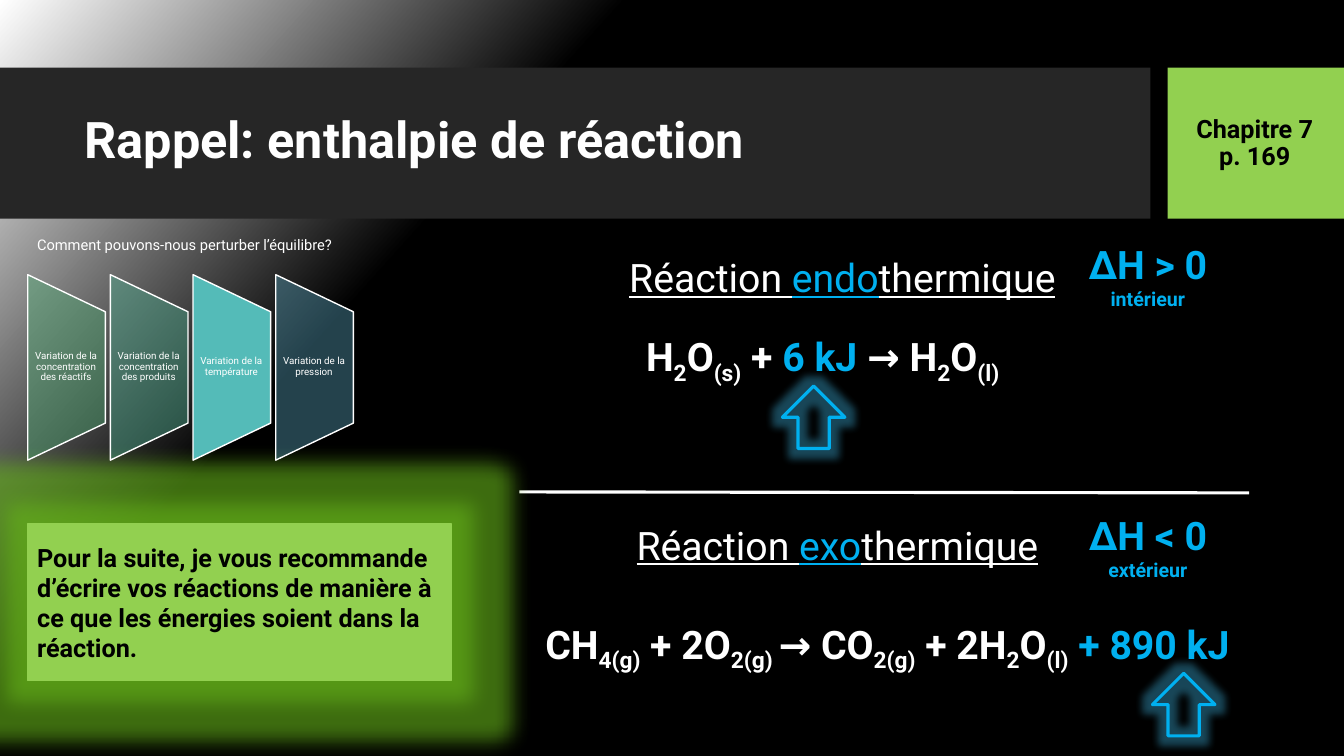
from dataclasses import dataclass

import lxml.etree
import pptx
import pptx.dml.color
import pptx.enum.shapes
import pptx.enum.text
import pptx.oxml.ns
import pptx.util

Inches = pptx.util.Inches
Shapes = pptx.enum.shapes.MSO_SHAPE
Align = pptx.enum.text.PP_ALIGN
Anchor = pptx.enum.text.MSO_ANCHOR
qn = pptx.oxml.ns.qn


@dataclass(frozen=True)
class Theme:
    font: str = "Roboto"
    white: str = "FFFFFF"
    black: str = "000000"
    band: str = "262626"
    green: str = "92D050"
    green_glow: str = "66B41A"
    blue: str = "00B0F0"
    blue_glow: str = "3FB4E0"
    title: float = 36
    formula: float = 28
    body: float = 18
    note: float = 14
    question: float = 10.5
    factor: float = 7


THEME = Theme()


@dataclass(frozen=True)
class Box:
    left: float
    top: float
    width: float
    height: float

    def lengths(self) -> list:
        return [Inches(n) for n in (self.left, self.top, self.width, self.height)]


@dataclass(frozen=True)
class Fragment:
    text: str
    color: str = THEME.white
    subscript: bool = False


@dataclass(frozen=True)
class Line:
    fragments: list[Fragment]
    size: float
    bold: bool = False
    underline: bool = False
    align: Align = Align.CENTER
    spacing: float = 0.9


@dataclass(frozen=True)
class Reaction:
    heading: Box
    prefix: str
    equation_box: Box
    equation: list[Fragment]
    arrow: Box
    enthalpy_box: Box
    enthalpy: str
    side: str


@dataclass(frozen=True)
class Factor:
    text: str
    color: str
    opacity: int = 100


def rgb(color: str) -> pptx.dml.color.RGBColor:
    return pptx.dml.color.RGBColor.from_string(color)


def sub(text: str) -> Fragment:
    return Fragment(text, subscript=True)


def write(shape, lines: list[Line], anchor=Anchor.MIDDLE) -> None:
    frame = shape.text_frame
    frame.word_wrap = True
    frame.vertical_anchor = anchor
    for index, line in enumerate(lines):
        paragraph = frame.add_paragraph() if index else frame.paragraphs[0]
        paragraph.alignment = line.align
        paragraph.line_spacing = line.spacing
        paragraph.font.name = THEME.font
        paragraph.font.size = pptx.util.Pt(line.size)
        paragraph.font.bold = line.bold
        paragraph.font.underline = line.underline
        for fragment in line.fragments:
            run = paragraph.add_run()
            run.text = fragment.text
            run.font.color.rgb = rgb(fragment.color)
            if fragment.subscript:
                run._r.get_or_add_rPr().set("baseline", "-25000")


def add_text(slide, box: Box, lines: list[Line], anchor=Anchor.MIDDLE):
    shape = slide.shapes.add_textbox(*box.lengths())
    write(shape, lines, anchor)
    return shape


def add_alpha(parent, opacity: int) -> None:
    lxml.etree.SubElement(parent, qn("a:alpha"), val=str(opacity * 1000))


def add_shape(slide, kind, box: Box, fill: str = "", line: str = "",
              weight: float = 1, opacity: int = 100):
    shape = slide.shapes.add_shape(kind, *box.lengths())
    shape.shadow.inherit = False
    if fill:
        shape.fill.solid()
        shape.fill.fore_color.rgb = rgb(fill)
        if opacity < 100:
            add_alpha(shape._element.spPr.find(qn("a:solidFill"))[0], opacity)
    else:
        shape.fill.background()
    if line:
        shape.line.color.rgb = rgb(line)
        shape.line.width = pptx.util.Pt(weight)
    else:
        shape.line.fill.background()
    return shape


def add_glow(shape, color: str, radius: float, opacity: int) -> None:
    effects = shape._element.spPr.find(qn("a:effectLst"))
    glow = lxml.etree.SubElement(effects, qn("a:glow"), rad=str(Inches(radius)))
    add_alpha(lxml.etree.SubElement(glow, qn("a:srgbClr"), val=color), opacity)


def paint_background(slide) -> None:
    fill = slide.background.fill
    fill.gradient()
    fill.gradient_angle = 318
    for stop, position, color in zip(fill.gradient_stops, (0, 0.31), (THEME.white, THEME.black)):
        stop.position = position
        stop.color.rgb = rgb(color)


def add_header(slide) -> None:
    add_shape(slide, Shapes.RECTANGLE, Box(0, 0.67, 11.41, 1.5), THEME.band)
    add_shape(slide, Shapes.RECTANGLE, Box(11.58, 0.67, 1.75, 1.5), THEME.green)
    title = Fragment("Rappel: enthalpie de réaction")
    add_text(slide, Box(0.74, 0.82, 10.51, 1.18),
             [Line([title], THEME.title, bold=True, align=Align.LEFT)])
    add_text(slide, Box(11.56, 0.67, 1.77, 1.51),
             [Line([Fragment(text, THEME.black)], THEME.body, bold=True)
              for text in ("Chapitre 7", "p. 169")])


def add_reaction(slide, reaction: Reaction) -> None:
    heading = [Fragment("Réaction "), Fragment(reaction.prefix, THEME.blue), Fragment("thermique")]
    add_text(slide, reaction.heading, [Line(heading, THEME.formula, underline=True)])
    add_text(slide, reaction.equation_box, [Line(reaction.equation, THEME.formula, bold=True)])
    arrow = add_shape(slide, Shapes.UP_ARROW, reaction.arrow, line=THEME.blue, weight=2.25)
    add_glow(arrow, THEME.blue_glow, 0.16, 40)
    add_text(slide, reaction.enthalpy_box,
             [Line([Fragment(text, THEME.blue)], size, bold=True, spacing=1.0)
              for text, size in ((reaction.enthalpy, THEME.formula), (reaction.side, THEME.note))],
             Anchor.TOP)


def add_divider(slide) -> None:
    divider = slide.shapes.add_connector(
        pptx.enum.shapes.MSO_CONNECTOR.STRAIGHT,
        Inches(12.39), Inches(4.89), Inches(5.15), Inches(4.88))
    divider.line.color.rgb = rgb(THEME.white)
    divider.line.width = pptx.util.Pt(2.25)
    lxml.etree.SubElement(divider._element.spPr, qn("a:effectLst"))


def add_advice(slide) -> None:
    advice = add_shape(slide, Shapes.RECTANGLE, Box(0.27, 5.2, 4.21, 1.55), THEME.green, THEME.green)
    add_glow(advice, THEME.green_glow, 0.4, 60)
    text = ("Pour la suite, je vous recommande d’écrire vos réactions de manière à "
            "ce que les énergies soient dans la réaction.")
    write(advice, [Line([Fragment(text, THEME.black)], THEME.body, bold=True,
                        align=Align.LEFT, spacing=1.0)])


def add_factors(slide, factors: list[Factor]) -> None:
    question = Fragment("Comment pouvons-nous perturber l’équilibre?")
    add_text(slide, Box(0.27, 2.21, 3.23, 0.46),
             [Line([question], THEME.question, align=Align.LEFT)])
    for index, factor in enumerate(factors):
        offset = 0.82 * index
        panel = add_shape(slide, Shapes.FLOWCHART_MANUAL_OPERATION,
                          Box(-0.26 + offset, 3.26, 1.84, 0.77),
                          factor.color, THEME.white, opacity=factor.opacity)
        panel.rotation = 270
        label = add_text(slide, Box(0.27 + offset, 3.09, 0.77, 1.1),
                         [Line([Fragment(factor.text)], THEME.factor)])
        frame = label.text_frame
        frame.margin_left = frame.margin_right = Inches(0.05)
        frame.margin_top = frame.margin_bottom = 0


REACTIONS = [
    Reaction(Box(5.07, 2.4, 6.57, 0.76), "endo", Box(5.51, 3.27, 5.3, 0.55),
             [Fragment("H"), sub("2"), Fragment("O"), sub("(s)"), Fragment(" + "),
              Fragment("6 kJ ", THEME.blue), Fragment("→ H"), sub("2"), Fragment("O"), sub("(l)")],
             Box(7.76, 3.83, 0.62, 0.62), Box(10.65, 2.33, 1.47, 0.81), "ΔH > 0", "intérieur"),
    Reaction(Box(5.07, 5.05, 6.47, 0.76), "exo", Box(5.07, 6.12, 7.56, 0.55),
             [Fragment("CH"), sub("4(g)"), Fragment(" + 2O"), sub("2(g) "), Fragment("→ CO"),
              sub("2(g)"), Fragment(" + 2H"), sub("2"), Fragment("O"), sub("(l)"),
              Fragment(" + 890 kJ ", THEME.blue)],
             Box(11.43, 6.68, 0.62, 0.62), Box(10.65, 5.02, 1.47, 0.81), "ΔH < 0", "extérieur"),
]
FACTORS = [
    Factor("Variation de la concentration des réactifs", "4BAF73", 40),
    Factor("Variation de la concentration des produits", "4EB696", 40),
    Factor("Variation de la température", "54BBB8"),
    Factor("Variation de la pression", "5AA6C0", 40),
]


def main() -> None:
    presentation = pptx.Presentation()
    presentation.slide_width = Inches(13.33)
    presentation.slide_height = Inches(7.5)
    slide = presentation.slides.add_slide(presentation.slide_layouts[6])
    paint_background(slide)
    add_header(slide)
    add_divider(slide)
    for reaction in REACTIONS:
        add_reaction(slide, reaction)
    add_advice(slide)
    add_factors(slide, FACTORS)
    presentation.save("out.pptx")


if __name__ == "__main__":
    main()
